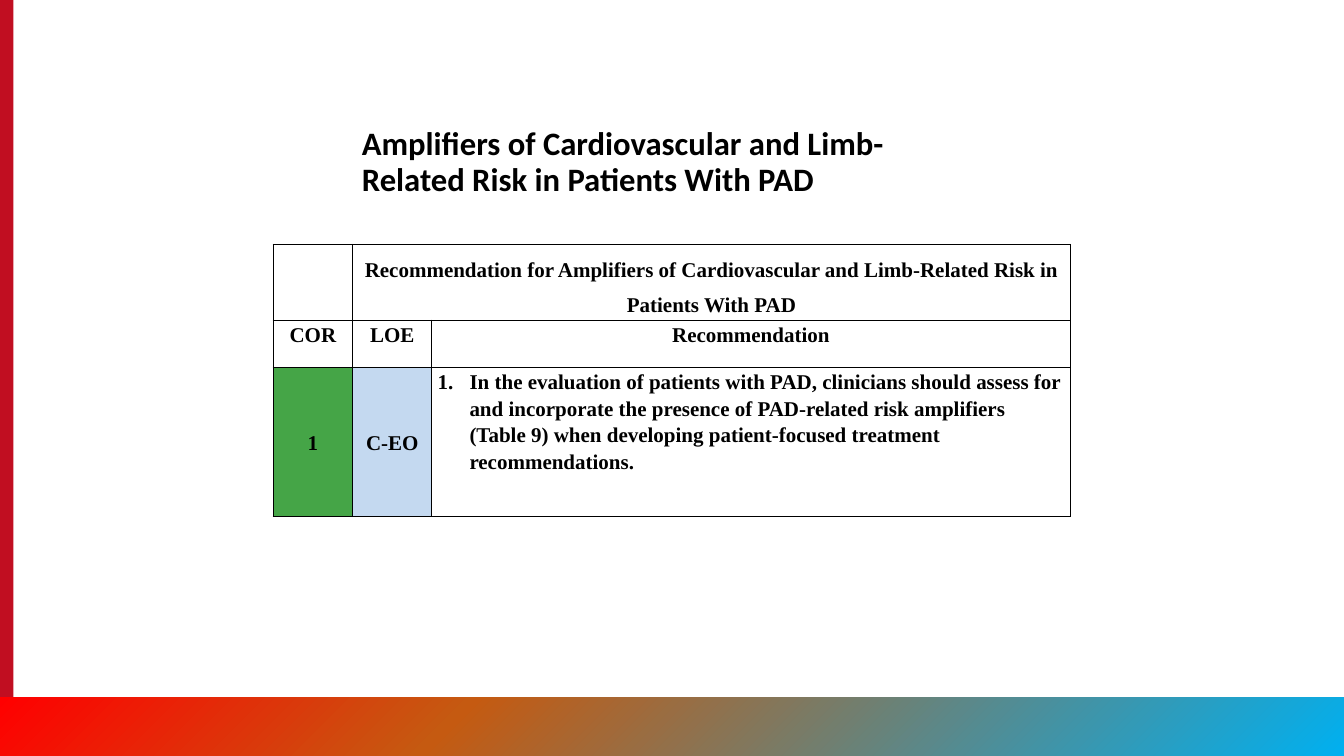
from lxml import etree
from pptx import Presentation
from pptx.dml.color import RGBColor
from pptx.enum.shapes import MSO_SHAPE
from pptx.enum.text import MSO_ANCHOR, PP_ALIGN
from pptx.oxml import parse_xml
from pptx.oxml.ns import nsdecls, qn
from pptx.util import Inches, Pt

C = {"text": "000000", "border": "000000", "bar": "C10E21", "green": "45A547",
     "pale": "C4D9F0", "red": "FF0000", "orange": "C55A11", "blue": "00B0F0"}
TITLE = "Amplifiers of Cardiovascular and Limb-Related Risk in Patients With PAD"
ROWS = [
    ["", "Recommendation for Amplifiers of Cardiovascular and Limb-Related Risk in Patients With PAD", ""],
    ["COR", "LOE", "Recommendation"],
    ["1", "C-EO", "In the evaluation of patients with PAD, clinicians should assess for and "
     "incorporate the presence of PAD-related risk amplifiers (Table 9) when developing "
     "patient-focused treatment recommendations."],
]
COLS = [0.95, 0.94, 7.6]
HEIGHTS = [0.83, 0.56, 1.78]
FILLS = {(2, 0): "green", (2, 1): "pale"}
MIDDLE = {(0, 1), (2, 0), (2, 1)}
NUMBERED = (2, 2)
BAND = [(0, "red"), (34, "orange"), (100, "blue")]


def style(p, font, size, spacing):
    p.line_spacing = spacing
    p.font.size = Pt(size)
    for r in p.runs:
        f = r.font
        f.name, f.size, f.bold = font, Pt(size), True
        f.color.rgb = RGBColor.from_string(C["text"])


def add_rect(s, x, y, w, h, color):
    sp = s.shapes.add_shape(MSO_SHAPE.RECTANGLE, Inches(x), Inches(y), Inches(w), Inches(h))
    sp.shadow.inherit = False
    sp.fill.solid()
    sp.fill.fore_color.rgb = RGBColor.from_string(C[color])
    sp.line.fill.background()
    return sp


def add_gradient(sp, stops, angle):
    gs = "".join(f'<a:gs pos="{pos * 1000}"><a:srgbClr val="{C[c]}"/></a:gs>' for pos, c in stops)
    grad = parse_xml(f'<a:gradFill {nsdecls("a")} rotWithShape="1"><a:gsLst>{gs}</a:gsLst>'
                     f'<a:lin ang="{angle * 60000}" scaled="0"/></a:gradFill>')
    pr = sp._element.spPr
    pr.replace(pr.find(qn("a:solidFill")), grad)


def add_borders(cell):
    pr = cell._tc.get_or_add_tcPr()
    for side in ("lnL", "lnR", "lnT", "lnB"):
        pr.append(parse_xml(f'<a:{side} {nsdecls("a")} w="12700"><a:solidFill>'
                            f'<a:srgbClr val="{C["border"]}"/></a:solidFill></a:{side}>'))


def add_number(p):
    pr = p._p.get_or_add_pPr()
    pr.set("marL", str(Inches(0.38)))
    pr.set("indent", str(-Inches(0.38)))
    etree.SubElement(pr, qn("a:buFont")).set("typeface", "+mj-lt")
    etree.SubElement(pr, qn("a:buAutoNum")).set("type", "arabicPeriod")


def fill_cell(cell, pos, text):
    cell.margin_left = cell.margin_right = Inches(0.07)
    cell.margin_top = cell.margin_bottom = 0
    cell.vertical_anchor = MSO_ANCHOR.MIDDLE if pos in MIDDLE else MSO_ANCHOR.TOP
    add_borders(cell)
    if pos in FILLS:
        cell.fill.solid()
        cell.fill.fore_color.rgb = RGBColor.from_string(C[FILLS[pos]])
    else:
        cell.fill.background()
    cell.text_frame.text = text
    p = cell.text_frame.paragraphs[0]
    if pos == NUMBERED:
        add_number(p)
    else:
        p.alignment = PP_ALIGN.CENTER
    style(p, "Times New Roman", 18, 1.5 if pos[0] == 0 else 1.15)


def add_recommendations(s):
    shape = s.shapes.add_table(len(ROWS), len(COLS), Inches(3.25), Inches(2.91),
                               Inches(sum(COLS)), Inches(sum(HEIGHTS)))
    tbl = shape.table
    tbl.first_row = tbl.horz_banding = False
    for col, w in zip(tbl.columns, COLS):
        col.width = Inches(w)
    for row, h in zip(tbl.rows, HEIGHTS):
        row.height = Inches(h)
    for i, row in enumerate(ROWS):
        for j, text in enumerate(row):
            fill_cell(tbl.cell(i, j), (i, j), text)
    tbl.cell(0, 1).merge(tbl.cell(0, 2))


def main():
    prs = Presentation()
    prs.slide_width, prs.slide_height = Inches(16), Inches(9)
    s = prs.slides.add_slide(prs.slide_layouts[6])
    add_rect(s, 0, 0, 0.16, 9, "bar")
    add_gradient(add_rect(s, 0, 8.3, 16, 0.7, "red"), BAND, 45)
    tf = s.shapes.add_textbox(Inches(4.21), Inches(1.42), Inches(7.58), Inches(0.99)).text_frame
    tf.word_wrap = True
    tf.vertical_anchor = MSO_ANCHOR.BOTTOM
    tf.text = TITLE
    style(tf.paragraphs[0], "Calibri", 28, 0.9)
    add_recommendations(s)
    prs.save("out.pptx")


if __name__ == "__main__":
    main()
